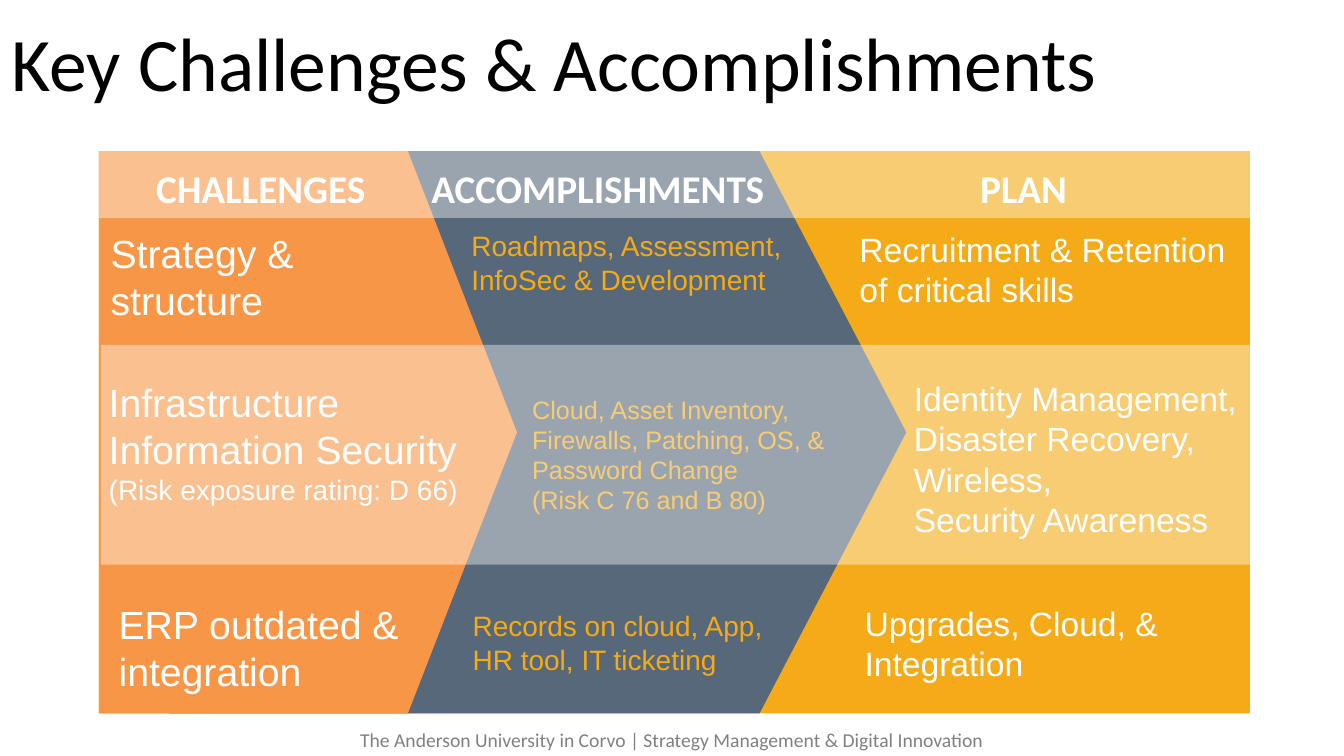
from pptx import Presentation
from pptx.dml.color import RGBColor
from pptx.enum.shapes import MSO_SHAPE as SHAPE
from pptx.enum.text import MSO_ANCHOR as ANCHOR, PP_ALIGN as ALIGN
from pptx.oxml.ns import qn
from pptx.util import Cm, Pt
from lxml.etree import SubElement

WHITE = RGBColor(0xFF, 0xFF, 0xFF)
BLACK = RGBColor(0x00, 0x00, 0x00)
GREY = RGBColor(0x80, 0x80, 0x80)
AMBER = RGBColor(0xF4, 0xAB, 0x17)
SLATE = RGBColor(0x57, 0x68, 0x7B)
ORANGE = RGBColor(0xF7, 0x96, 0x46)

TOP, HEIGHT = 3.81, 14.17
BAND_W = 29.01

prs = Presentation()
prs.slide_width, prs.slide_height = Cm(33.87), Cm(19.05)
s = prs.slides.add_slide(prs.slide_layouts[6])


def add_block(kind, box, color, alpha=None):
    """Add a borderless filled shape; alpha is its opacity in percent."""
    sp = s.shapes.add_shape(kind, *map(Cm, box))
    sp.shadow.inherit = False
    sp.line.fill.background()
    sp.fill.solid()
    sp.fill.fore_color.rgb = color
    if alpha is not None:
        srgb = sp.fill._xPr.find(qn("a:solidFill"))[0]
        SubElement(srgb, qn("a:alpha"), val=str(alpha * 1000))
    return sp


def add_text(box, lines, size, color, font="Arial", bold=False,
             align=ALIGN.LEFT, anchor=ANCHOR.TOP):
    """Add a text box; a line is a string or a (string, size) pair."""
    tf = s.shapes.add_textbox(*map(Cm, box)).text_frame
    tf.word_wrap = True
    tf.vertical_anchor = anchor
    for i, line in enumerate(lines):
        text, pts = line if isinstance(line, tuple) else (line, size)
        p = tf.add_paragraph() if i else tf.paragraphs[0]
        p.alignment = align
        r = p.add_run()
        r.text = text
        for name, value in {"name": font, "size": Pt(pts), "bold": bold}.items():
            setattr(r.font, name, value)
        r.font.color.rgb = color
    return tf


title = add_text((0.05, 0.3, 33.87, 2.54), ["Key Challenges & Accomplishments"],
                 54, BLACK, "Calibri", anchor=ANCHOR.BOTTOM)
title.paragraphs[0].line_spacing = 0.9

# Overlapping arrows, widest at the back
for left, width, point, color in [
    (2.49, BAND_W, 0, AMBER),
    (4.27, 18.57, 0.261, SLATE),
    (2.49, 10.54, 0.261, ORANGE),
]:
    arrow = add_block(SHAPE.PENTAGON, (left, TOP, width, HEIGHT), color)
    arrow.adjustments[0] = point

# Column headings on a pale band
add_block(SHAPE.RECTANGLE, (2.49, TOP, BAND_W, 1.68), WHITE, 40)
for left, width, heading in [
    (3.23, 6.68, "CHALLENGES"),
    (10.44, 9.25, "ACCOMPLISHMENTS"),
    (23.7, 4.19, "PLAN"),
]:
    add_text((left, 4.01, width, 1.45), [heading], 28, WHITE, "Calibri", True, ALIGN.CENTER)

# The middle band also veils the accomplishments text beneath it
add_text((13.16, 9.8, 9.19, 3.33),
         ["Cloud, Asset Inventory, Firewalls, Patching, OS, & Password Change",
          "(Risk C 76 and B 80)"], 18, AMBER)
add_block(SHAPE.RECTANGLE, (2.54, 8.69, BAND_W, 5.54), WHITE, 40)

for box, lines, size, color in [
    ((2.54, 5.66, 8.41, 2.64), ["Strategy & structure"], 28, WHITE),
    ((11.63, 5.64, 9.09, 1.96), ["Roadmaps, Assessment, InfoSec & Development"], 20, AMBER),
    ((21.41, 5.64, 9.96, 2.31), ["Recruitment & Retention of critical skills"], 24, WHITE),
    ((2.49, 9.4, 10.8, 3.51),
     ["Infrastructure", "Information Security", ("(Risk exposure rating: D 66)", 20)], 28, WHITE),
    ((22.78, 9.4, 8.69, 4.37),
     ["Identity Management, Disaster Recovery, Wireless,", "Security Awareness"], 24, WHITE),
    ((2.74, 15.01, 8.33, 2.64), ["ERP outdated & integration"], 28, WHITE),
    ((11.66, 15.21, 8.69, 1.96), ["Records on cloud, App, HR tool, IT ticketing"], 20, AMBER),
    ((21.54, 15.06, 9.96, 2.31), ["Upgrades, Cloud, & Integration"], 24, WHITE),
]:
    add_text(box, lines, size, color)

add_text((0, 18.21, 33.87, 0.86),
         ["The Anderson University in Corvo | Strategy Management & Digital Innovation"],
         14, GREY, "Calibri", align=ALIGN.CENTER)

prs.save("out.pptx")
